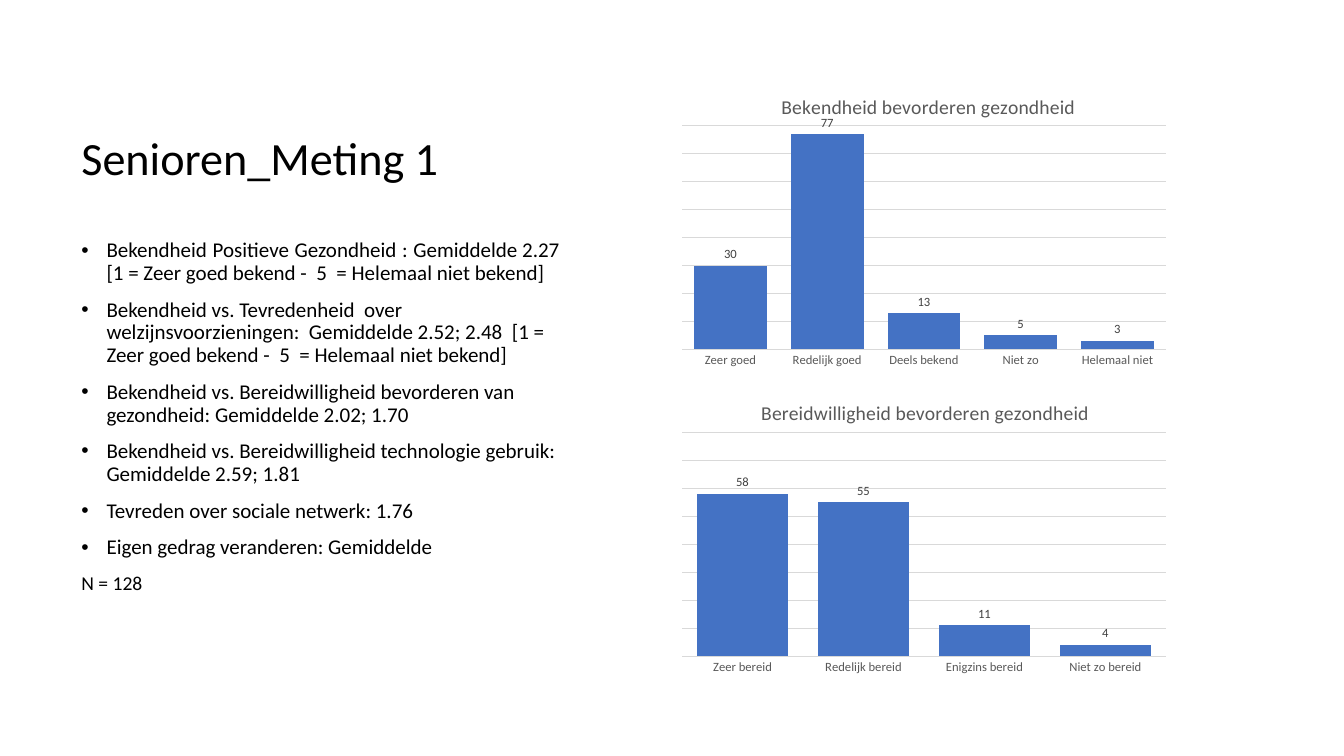
from lxml import etree
from pptx import Presentation
from pptx.chart.data import CategoryChartData
from pptx.dml.color import RGBColor
from pptx.enum.chart import XL_CHART_TYPE, XL_LABEL_POSITION, XL_TICK_LABEL_POSITION, XL_TICK_MARK
from pptx.enum.text import MSO_ANCHOR, PP_ALIGN
from pptx.oxml.ns import qn
from pptx.util import Pt

COLUMNS = XL_CHART_TYPE.COLUMN_CLUSTERED
OUTSIDE = XL_LABEL_POSITION.OUTSIDE_END
NO_TICK = XL_TICK_MARK.NONE
NO_TICK_LABELS = XL_TICK_LABEL_POSITION.NONE
BOTTOM, MIDDLE = MSO_ANCHOR.BOTTOM, MSO_ANCHOR.MIDDLE
JUSTIFY = PP_ALIGN.JUSTIFY

FONT = "Calibri"
BLACK = RGBColor(0x00, 0x00, 0x00)
GREY = RGBColor(0x59, 0x59, 0x59)
DARK_GREY = RGBColor(0x40, 0x40, 0x40)
LIGHT_GREY = RGBColor(0xD9, 0xD9, 0xD9)
BLUE = RGBColor(0x44, 0x72, 0xC4)

TITLE = "Senioren_Meting 1"
FINDINGS = [
    "Bekendheid Positieve Gezondheid : Gemiddelde\u00a02.27 "
    "[1 = Zeer goed bekend -  5  = Helemaal niet bekend] ",
    "Bekendheid vs. Tevredenheid  over welzijnsvoorzieningen:  Gemiddelde 2.52; 2.48  "
    "[1 = Zeer goed bekend -  5  = Helemaal niet bekend]",
    "Bekendheid vs. Bereidwilligheid bevorderen van gezondheid: Gemiddelde 2.02; 1.70",
    "Bekendheid vs. Bereidwilligheid technologie gebruik: Gemiddelde 2.59; 1.81",
    "Tevreden over sociale netwerk: 1.76",
    "Eigen gedrag veranderen: Gemiddelde",
]
SAMPLE_SIZE = "N = 128"

# title, left share of the title, answers with their counts
CHARTS = [
    ("Bekendheid bevorderen gezondheid", 0.21,
     {"Zeer goed": 30, "Redelijk goed": 77, "Deels bekend": 13, "Niet zo": 5, "Helemaal niet": 3}),
    ("Bereidwilligheid bevorderen gezondheid", 0.17,
     {"Zeer bereid": 58, "Redelijk bereid": 55, "Enigzins bereid": 11, "Niet zo bereid": 4}),
]
CHART_LEFT, CHART_TOP, CHART_WIDTH, CHART_HEIGHT = 480, 51, 360, 216
CHART_STEP = 219


def style_font(font, size, color):
    font.name, font.size, font.bold = FONT, Pt(size), False
    font.color.rgb = color


def add_text_frame(page, left, top, width, height, anchor):
    frame = page.shapes.add_textbox(Pt(left), Pt(top), Pt(width), Pt(height)).text_frame
    frame.word_wrap = True
    frame.vertical_anchor = anchor
    return frame


def write(para, text, size, bulleted=False):
    para.text = text
    para.line_spacing = 0.9
    if bulleted:
        properties = para._p.get_or_add_pPr()
        properties.set("marL", str(Pt(18)))
        properties.set("indent", str(-Pt(18)))
        etree.SubElement(properties, qn("a:buFont")).set("typeface", "Arial")
        etree.SubElement(properties, qn("a:buChar")).set("char", "•")
    style_font(para.font, size, BLACK)


def set_layout(parent, index, **values):
    """Place a chart part by shares of the chart's width and height."""
    for old in parent.findall(qn("c:layout")):
        parent.remove(old)
    layout = etree.Element(qn("c:layout"))
    parent.insert(index, layout)
    manual = etree.SubElement(layout, qn("c:manualLayout"))
    for name, value in values.items():
        etree.SubElement(manual, qn("c:" + name)).set("val", str(value))


def add_bar_chart(page, top, title, title_left, counts):
    data = CategoryChartData()
    data.categories = list(counts)
    data.add_series("Series 1", list(counts.values()))
    chart = page.shapes.add_chart(COLUMNS, Pt(CHART_LEFT), Pt(top), Pt(CHART_WIDTH),
                                  Pt(CHART_HEIGHT), data).chart
    style_font(chart.font, 10, BLACK)
    chart.has_legend = False

    heading = chart.chart_title
    heading.text_frame.text = title
    style_font(heading.text_frame.paragraphs[0].font, 14, GREY)
    set_layout(heading._element, 1, xMode="edge", yMode="edge", x=title_left, y=0.06)
    set_layout(chart._chartSpace.chart.plotArea, 0, layoutTarget="inner",
               xMode="edge", yMode="edge", x=0.02, y=0.18, w=0.96, h=0.74)

    plot = chart.plots[0]
    plot.gap_width, plot.overlap, plot.vary_by_categories = 33, -30, False
    series = plot.series[0]
    series.format.fill.solid()
    series.format.fill.fore_color.rgb = BLUE
    labels = series.data_labels
    labels.show_value = True
    labels.position = OUTSIDE
    style_font(labels.font, 9, DARK_GREY)

    answers, scale = chart.category_axis, chart.value_axis
    answers.major_tick_mark = answers.minor_tick_mark = NO_TICK
    style_font(answers.tick_labels.font, 9, GREY)
    scale.minimum_scale, scale.maximum_scale, scale.major_unit = 0, 80, 10
    scale.has_major_gridlines = True
    scale.tick_label_position = NO_TICK_LABELS
    scale.visible = False
    for line in (answers.format.line, scale.major_gridlines.format.line):
        line.color.rgb = LIGHT_GREY
        line.width = Pt(0.75)


def main():
    deck = Presentation()
    deck.slide_width, deck.slide_height = Pt(960), Pt(540)
    page = deck.slides.add_slide(deck.slide_layouts[6])

    write(add_text_frame(page, 51, 42, 337, 94, BOTTOM).paragraphs[0], TITLE, 33)

    body = add_text_frame(page, 51, 160, 356, 276, MIDDLE)
    for index, finding in enumerate(FINDINGS):
        para = body.add_paragraph() if index else body.paragraphs[0]
        write(para, finding, 15, bulleted=True)
        if index:
            para.space_before = Pt(10)
    body.paragraphs[0].alignment = JUSTIFY
    closing = body.add_paragraph()
    write(closing, SAMPLE_SIZE, 14)
    closing.space_before = Pt(10)

    for index, (title, title_left, counts) in enumerate(CHARTS):
        add_bar_chart(page, CHART_TOP + index * CHART_STEP, title, title_left, counts)

    deck.save("out.pptx")


if __name__ == "__main__":
    main()
